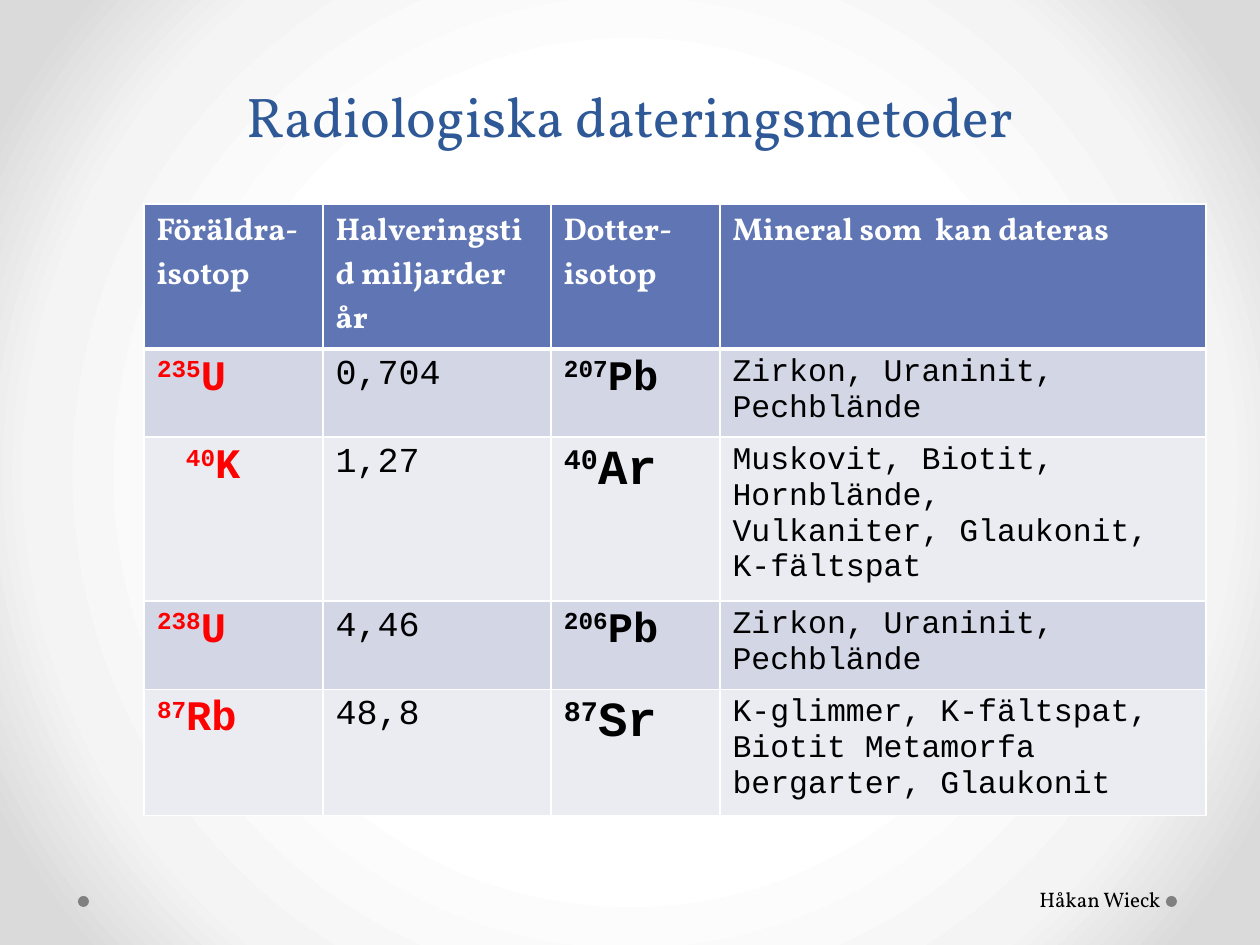
"""Build the slide on radiometric dating methods."""
from dataclasses import dataclass

from lxml import etree
from pptx import Presentation
from pptx import util as u
from pptx.dml import color
from pptx.enum import shapes, text
from pptx.oxml import ns

PX = 914400 / 126
SERIF, MONO = "Vollkorn", "Courier New"
BLACK, WHITE, RED = "000000", "FFFFFF", "FF0000"
HEADER_FILL, BAND_FILLS = "6076B4", ("D2D6E5", "EAECF2")
COLUMN_WIDTHS = (179, 228, 169, 486)
ROW_HEIGHTS = (145, 84, 155, 84, 120)
CELL_MARGIN = 13
HEADERS = ("Föräldra-isotop", "Halveringstid miljarder år", "Dotter- isotop", "Mineral som  kan dateras")


@dataclass(frozen=True)
class Style:
    size: int
    font: str = MONO
    colour: str = BLACK
    bold: bool = False


@dataclass(frozen=True)
class Isotope:
    mass: str
    symbol: str
    size: int = 24
    indent: int = 0


@dataclass(frozen=True)
class Method:
    parent: Isotope
    half_life: str
    daughter: Isotope
    minerals: str


METHODS = (
    Method(Isotope("235", "U"), "0,704", Isotope("207", "Pb"), "Zirkon, Uraninit, Pechblände"),
    Method(Isotope("40", "K", indent=29), "1,27", Isotope("40", "Ar", 28),
           "Muskovit, Biotit, Hornblände,\nVulkaniter, Glaukonit, K-fältspat"),
    Method(Isotope("238", "U"), "4,46", Isotope("206", "Pb"), "Zirkon, Uraninit, Pechblände"),
    Method(Isotope("87", "Rb"), "48,8", Isotope("87", "Sr", 28),
           "K-glimmer, K-fältspat, Biotit Metamorfa bergarter, Glaukonit"),
)


def px(length: int) -> u.Emu:
    """Turn pixels into EMU."""
    return u.Emu(round(length * PX))


def rgb(value: str) -> color.RGBColor:
    """Turn a hex string into a colour."""
    return color.RGBColor.from_string(value)


def style_run(run, style: Style) -> None:
    """Format one run."""
    run.font.name = style.font
    run.font.size = u.Pt(style.size)
    run.font.bold = style.bold
    run.font.color.rgb = rgb(style.colour)


def write(frame, content: str, style: Style) -> None:
    """Fill a text frame with evenly styled paragraphs."""
    frame.text = content
    for paragraph in frame.paragraphs:
        for run in paragraph.runs:
            style_run(run, style)


def write_isotope(cell, isotope: Isotope, colour: str) -> None:
    """Write an isotope with its mass number raised."""
    cell.margin_left = px(CELL_MARGIN + isotope.indent)
    paragraph = cell.text_frame.paragraphs[0]
    for content, baseline in ((isotope.mass, "30000"), (isotope.symbol, "0")):
        run = paragraph.add_run()
        run.text = content
        style_run(run, Style(isotope.size, colour=colour, bold=True))
        run.font._element.set("baseline", baseline)


def style_cell(cell, fill: str, top: int, bottom: int) -> None:
    """Give a cell white borders, in points, and a fill."""
    properties = cell._tc.get_or_add_tcPr()
    for side, width in (("L", 1), ("R", 1), ("T", top), ("B", bottom)):
        line = etree.SubElement(properties, ns.qn(f"a:ln{side}"), w=str(u.Pt(width)))
        solid = etree.SubElement(line, ns.qn("a:solidFill"))
        etree.SubElement(solid, ns.qn("a:srgbClr"), val=WHITE)
    cell.fill.solid()
    cell.fill.fore_color.rgb = rgb(fill)


def draw_background(slide) -> None:
    """Paint a circular gradient that darkens towards the corners."""
    slide.background.fill.gradient()
    gradient = slide._element.find(f".//{ns.qn('a:gradFill')}")
    for child in list(gradient):
        gradient.remove(child)
    stops = etree.SubElement(gradient, ns.qn("a:gsLst"))
    for percent, colour in ((50, WHITE), (76, "F4F4F4"), (92, "DADADA")):
        stop = etree.SubElement(stops, ns.qn("a:gs"), pos=str(percent * 1000))
        etree.SubElement(stop, ns.qn("a:srgbClr"), val=colour)
    path = etree.SubElement(gradient, ns.qn("a:path"), path="circle")
    etree.SubElement(path, ns.qn("a:fillToRect"), l="50000", t="50000", r="50000", b="50000")


def draw_dot(slide, left: int) -> None:
    """Draw one grey footer dot."""
    dot = slide.shapes.add_shape(shapes.MSO_SHAPE.OVAL, px(left), px(896), px(11), px(11))
    dot.shadow.inherit = False
    dot.fill.solid()
    dot.fill.fore_color.rgb = rgb("808080")
    dot.line.fill.background()


def draw_text(slide, box: tuple[int, int, int, int], content: str, style: Style, align):
    """Add a text box and return its frame."""
    frame = slide.shapes.add_textbox(*map(px, box)).text_frame
    write(frame, content, style)
    frame.paragraphs[0].alignment = align
    return frame


def draw_table(slide) -> None:
    """Draw the table of dating methods."""
    table = slide.shapes.add_table(len(ROW_HEIGHTS), len(HEADERS), px(144), px(204),
                                   px(sum(COLUMN_WIDTHS)), px(sum(ROW_HEIGHTS))).table
    for column, width in zip(table.columns, COLUMN_WIDTHS):
        column.width = px(width)
    for row, height in zip(table.rows, ROW_HEIGHTS):
        row.height = px(height)
    for cell, heading in zip(table.rows[0].cells, HEADERS):
        write(cell.text_frame, heading, Style(18, SERIF, WHITE, True))
        style_cell(cell, HEADER_FILL, 1, 3)
    for index, method in enumerate(METHODS):
        cells = list(table.rows[index + 1].cells)
        write_isotope(cells[0], method.parent, RED)
        write(cells[1].text_frame, method.half_life, Style(20))
        write_isotope(cells[2], method.daughter, BLACK)
        write(cells[3].text_frame, method.minerals, Style(18))
        for cell in cells:
            style_cell(cell, BAND_FILLS[index % 2], 1 if index else 3, 1)


def main() -> None:
    """Build and save the slide."""
    presentation = Presentation()
    presentation.slide_width, presentation.slide_height = px(1260), px(945)
    slide = presentation.slides.add_slide(presentation.slide_layouts[6])
    draw_background(slide)
    for left in (1166, 78):
        draw_dot(slide, left)
    title = draw_text(slide, (63, 76, 1134, 79), "Radiologiska dateringsmetoder",
                      Style(32, SERIF, "2F5897"), text.PP_ALIGN.CENTER)
    title.word_wrap = True
    title.vertical_anchor = text.MSO_ANCHOR.BOTTOM
    title.paragraphs[0].line_spacing = u.Pt(58)
    draw_table(slide)
    author = draw_text(slide, (1021, 880, 152, 38), "Håkan Wieck", Style(12, SERIF), text.PP_ALIGN.RIGHT)
    author.word_wrap = False
    author.auto_size = text.MSO_AUTO_SIZE.SHAPE_TO_FIT_TEXT
    presentation.save("out.pptx")


if __name__ == "__main__":
    main()
